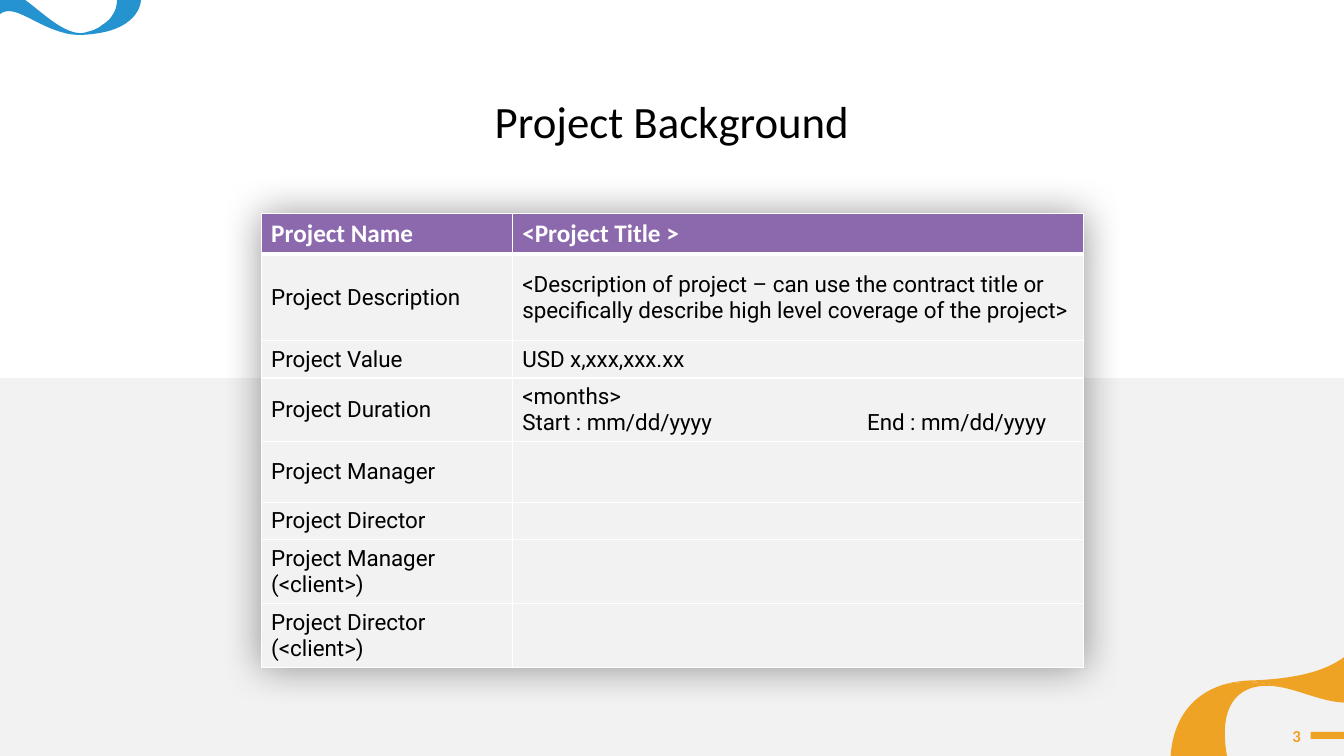
from lxml import etree
from pptx import Presentation
from pptx import util as u
from pptx.dml.color import RGBColor
from pptx.enum import shapes, text
from pptx.oxml import parse_xml
from pptx.oxml.ns import nsdecls, qn

COLORS = {
    "black": "000000",
    "white": "FFFFFF",
    "gray": "F2F2F2",
    "purple": "8C69AD",
    "orange": "EFA325",
    "blue": "2593CF",
}


def paint(shape, color):
    shape.fill.solid()
    shape.fill.fore_color.rgb = RGBColor.from_string(COLORS[color])
    shape.line.fill.background()
    shape.shadow.inherit = False


def style(para, font, size, color, bold=False):
    for span in para.runs:
        span.font.name = font
        span.font.size = u.Pt(size)
        span.font.bold = bold
        span.font.color.rgb = RGBColor.from_string(COLORS[color])


deck = Presentation()
deck.slide_width = u.Inches(13.33)
deck.slide_height = u.Inches(7.5)
page = deck.slides.add_slide(deck.slide_layouts[6])

lower_half = page.shapes.add_shape(
    shapes.MSO_SHAPE.RECTANGLE, 0, u.Inches(3.75), u.Inches(13.33), u.Inches(3.75))
paint(lower_half, "gray")

title = page.shapes.add_textbox(u.Inches(4.54), u.Inches(0.88), u.Inches(4.25), u.Inches(0.64))
title.text_frame.word_wrap = False
title.text_frame.auto_size = text.MSO_AUTO_SIZE.SHAPE_TO_FIT_TEXT
title.text_frame.text = "Project Background"
title_para = title.text_frame.paragraphs[0]
title_para.alignment = text.PP_ALIGN.CENTER
style(title_para, "Calibri", 32, "black")

ROWS = [
    (0.40, "Project Name", "<Project Title >"),
    (0.86, "Project Description",
     "<Description of project – can use the contract title or "
     "specifically describe high level coverage of the project>"),
    (0.37, "Project Value", "USD x,xxx,xxx.xx"),
    (0.63, "Project Duration", "<months>\nStart : mm/dd/yyyy\tEnd : mm/dd/yyyy"),
    (0.60, "Project Manager", ""),
    (0.37, "Project Director", ""),
    (0.63, "Project Manager\n(<client>)", ""),
    (0.63, "Project Director\n(<client>)", ""),
]
frame = page.shapes.add_table(
    len(ROWS), 2, u.Inches(2.59), u.Inches(2.12), u.Inches(8.16), u.Inches(4.49))
table = frame.table
table.horz_banding = False
table.columns[0].width = u.Inches(2.49)
table.columns[1].width = u.Inches(5.67)
table._tbl.tblPr.insert(0, parse_xml(
    f'<a:effectLst {nsdecls("a")}><a:outerShdw blurRad="{u.Inches(0.4)}" dist="0" algn="ctr" rotWithShape="0">'
    f'<a:srgbClr val="{COLORS["black"]}"><a:alpha val="40000"/></a:srgbClr></a:outerShdw></a:effectLst>'))

for row, (height, *entries) in enumerate(ROWS):
    table.rows[row].height = u.Inches(height)
    for col, entry in enumerate(entries):
        cell = table.cell(row, col)
        cell.text = entry
        cell.vertical_anchor = text.MSO_ANCHOR.MIDDLE
        cell_props = cell._tc.get_or_add_tcPr()
        for side in "LRTB":
            thick = (row, side) in ((0, "B"), (1, "T"))
            cell_props.append(parse_xml(
                f'<a:ln{side} {nsdecls("a")} w="{u.Pt(3 if thick else 1)}"><a:solidFill>'
                f'<a:srgbClr val="{COLORS["white"]}"/></a:solidFill></a:ln{side}>'))
        cell.fill.solid()
        cell.fill.fore_color.rgb = RGBColor.from_string(COLORS["gray" if row else "purple"])
        for para in cell.text_frame.paragraphs:
            if row:
                style(para, "Roboto", 16, "black")
            else:
                style(para, "Calibri", 18, "white", bold=True)
            if not entry:
                etree.SubElement(para._p, qn("a:endParaRPr"), sz="1600")
            if "\t" in para.text:
                para._p.get_or_add_pPr().append(parse_xml(
                    f'<a:tabLst {nsdecls("a")}><a:tab pos="{u.Inches(3.42)}" algn="l"/></a:tabLst>'))

number = page.shapes.add_textbox(u.Inches(12.27), u.Inches(7.1), u.Inches(0.73), u.Inches(0.4))
number.text_frame.word_wrap = True
number.text_frame.vertical_anchor = text.MSO_ANCHOR.MIDDLE
number.text_frame.text = "3"
number_para = number.text_frame.paragraphs[0]
number_para.alignment = text.PP_ALIGN.RIGHT
style(number_para, "Calibri", 12, "orange", bold=True)

number_bar = page.shapes.add_shape(
    shapes.MSO_SHAPE.RECTANGLE, u.Inches(13), u.Inches(7.26), u.Inches(0.33), u.Inches(0.07))
paint(number_bar, "orange")

RIBBONS = {
    "orange": [
        ((12.43, 6.82), [
            (12.51, 6.8, 12.58, 6.8, 12.66, 6.81), (12.66, 6.81, 12.4, 6.72, 12.11, 6.8),
            (11.67, 6.95, 11.62, 7.36, 11.61, 7.5), (12.17, 7.5),
            (12.13, 7.28, 12.11, 6.91, 12.43, 6.82)]),
        ((12.43, 6.75), [
            (12.31, 6.75, 12.2, 6.77, 12.11, 6.8), (12.4, 6.72, 12.66, 6.81, 12.66, 6.81),
            (12.88, 6.84, 13.1, 6.96, 13.33, 6.97), (13.33, 6.52),
            (13.15, 6.65, 12.89, 6.73, 12.43, 6.75)]),
    ],
    "blue": [
        ((1.4, -0.01), [
            (1.16, -0.01), (1.16, -0.01, 1.18, 0.15, 1.01, 0.25),
            (1.01, 0.25, 0.97, 0.29, 0.89, 0.31), (0.85, 0.32, 0.83, 0.33, 0.8, 0.33),
            (0.76, 0.33, 0.71, 0.33, 0.65, 0.33), (0.73, 0.35, 0.81, 0.35, 0.9, 0.34),
            (1.41, 0.29, 1.4, -0.01, 1.4, -0.01)]),
        ((0.8, 0.33), [
            (0.51, 0.32, 0.19, -0.17, 0, -0.08), (0, 0.14),
            (0.14, 0.03, 0.35, 0.26, 0.65, 0.33), (0.71, 0.33, 0.76, 0.33, 0.8, 0.33)]),
    ],
}
for color, pieces in RIBBONS.items():
    ribbon = page.shapes.add_group_shape()
    for start, segments in pieces:
        builder = ribbon.shapes.build_freeform(u.Inches(start[0]), u.Inches(start[1]))
        for segment in segments:
            points = zip(segment[::2], segment[1::2])
            builder.add_line_segments([(u.Inches(x), u.Inches(y)) for x, y in points], close=False)
        piece = builder.convert_to_shape()
        steps = iter(list(piece._element.iter(qn("a:lnTo"))))
        for segment in segments:
            step = next(steps)
            if len(segment) == 6:
                step.tag = qn("a:cubicBezTo")
                for control in (next(steps), next(steps)):
                    step.append(control[0])
                    control.getparent().remove(control)
        etree.SubElement(step.getparent(), qn("a:close"))
        paint(piece, color)

deck.save("out.pptx")
